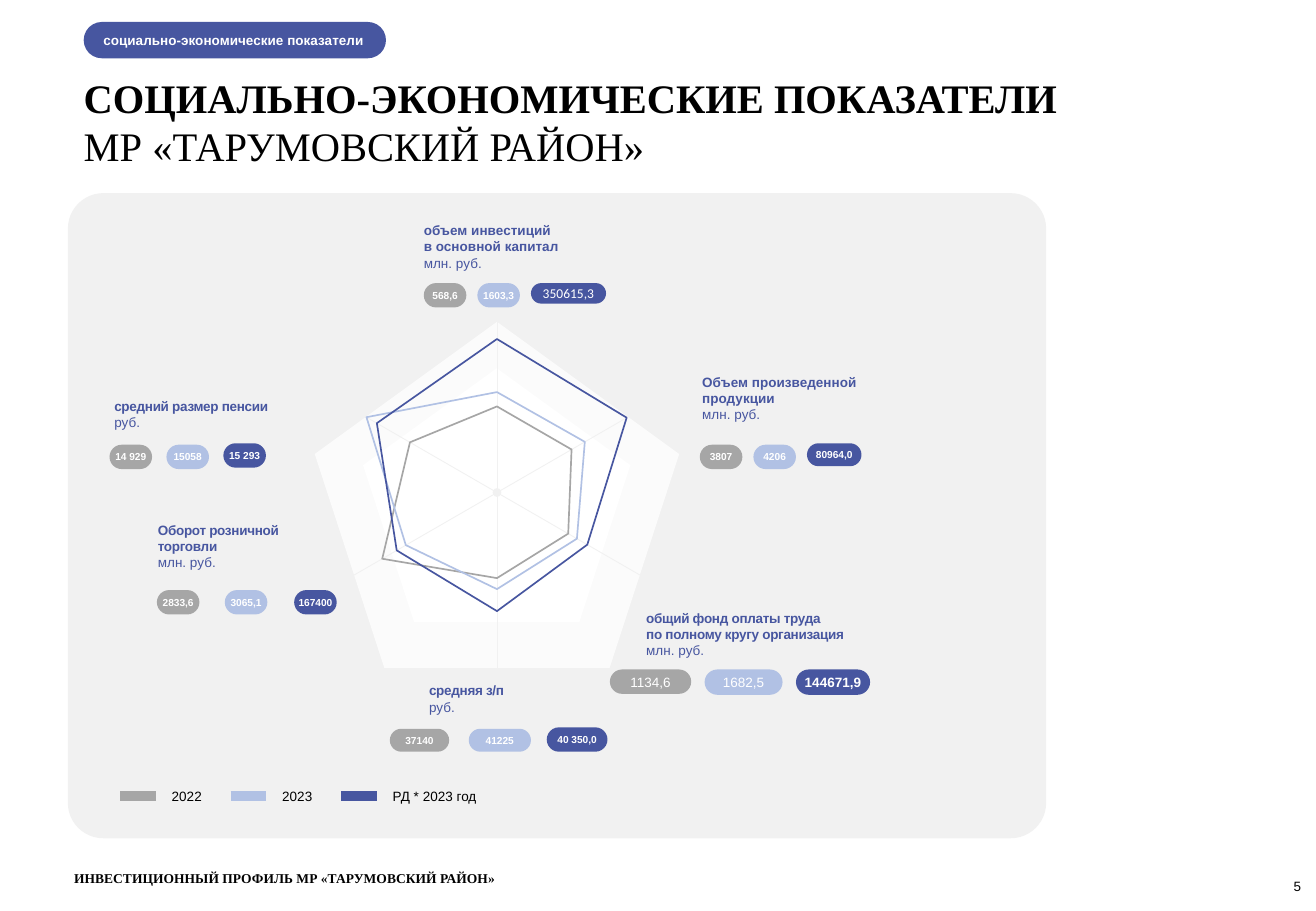
from itertools import cycle
from math import cos, radians, sin

from lxml import etree
from pptx import Presentation
from pptx.dml.color import RGBColor
from pptx.enum.shapes import MSO_CONNECTOR, MSO_SHAPE
from pptx.enum.text import MSO_ANCHOR, MSO_AUTO_SIZE, PP_ALIGN
from pptx.oxml.ns import qn
from pptx.util import Cm, Pt

ROUNDED, PENTAGON, OVAL = MSO_SHAPE.ROUNDED_RECTANGLE, MSO_SHAPE.REGULAR_PENTAGON, MSO_SHAPE.OVAL
STRAIGHT = MSO_CONNECTOR.STRAIGHT
LEFT, CENTER, RIGHT = PP_ALIGN.LEFT, PP_ALIGN.CENTER, PP_ALIGN.RIGHT
TOP, MIDDLE, BOTTOM = MSO_ANCHOR.TOP, MSO_ANCHOR.MIDDLE, MSO_ANCHOR.BOTTOM

COLORS = {"2022": "A6A6A6", "2023": "B1C1E4", "region": "4756A0", "panel": "F1F1F1",
          "outer": "FBFBFB", "white": "FFFFFF", "black": "000000"}
SERIES = ["2022", "2023", "region"]
LEGEND = ["2022", "2023", "РД * 2023 год"]
FRAME = {"margin_left": 0, "margin_top": 0, "margin_right": 0, "margin_bottom": 0,
         "word_wrap": True, "auto_size": MSO_AUTO_SIZE.NONE}
FONT = {"name": "Arial", "size": Pt(8), "bold": False}
SERIF = {"name": "Times New Roman"}
SMALL = {"size": Pt(6), "bold": True}
BOLD = {"bold": True}
PLAIN = {}
LINE_HEIGHT = 0.34
PILL = (0.89, 0.51)

RADII = {"2022": [1.8, 1.8, 1.72, 1.79, 2.77, 2.1],
         "2023": [2.1, 2.12, 1.93, 2.02, 2.2, 3.15],
         "region": [3.21, 3.13, 2.18, 2.48, 2.42, 2.9]}
SPOKES = [3.57, 3.23, 3.49, 3.67, 3.49, 3.23]

INDICATORS = [
    {"box": (8.86, 4.65, 3.12), "label": ["объем инвестиций", "в основной капитал"], "unit": "млн. руб.",
     "values": ["568,6", "1603,3", "350615,3"], "spots": [(0, 1.27), (1.12, 1.27), (2.24, 1.27)],
     "sizes": [PILL, PILL, (1.57, 0.43)], "fonts": [SMALL, SMALL, {"name": "Calibri"}], "spacing": 0},
    {"box": (14.68, 7.82, 3.38), "label": ["Объем произведенной", "продукции"], "unit": "млн. руб.",
     "values": ["3807", "4206", "80964,0"], "spots": [(-0.05, 1.48), (1.07, 1.48), (2.19, 1.45)],
     "sizes": [PILL, PILL, (1.14, 0.48)], "fonts": [SMALL], "spacing": 0},
    {"box": (13.51, 12.75, 4.34), "label": ["общий фонд оплаты труда", "по полному кругу организация"],
     "unit": "млн. руб.", "values": ["1134,6", "1682,5", "144671,9"],
     "spots": [(-0.76, 1.25), (1.22, 1.25), (3.13, 1.25)],
     "sizes": [(1.7, 0.51), (1.63, 0.53), (1.55, 0.53)], "fonts": [PLAIN, PLAIN, BOLD], "spacing": -20},
    {"box": (3.3, 10.92, 2.74), "label": ["Оборот розничной", "торговли"], "unit": "млн. руб.",
     "values": ["2833,6", "3065,1", "167400"], "spots": [(-0.02, 1.42), (1.4, 1.42), (2.85, 1.42)],
     "sizes": [PILL], "fonts": [SMALL], "spacing": -20},
    {"box": (2.39, 8.33, 4.34), "label": ["средний размер пенсии"], "unit": "руб.",
     "values": ["14 929", "15058", "15 293"], "spots": [(-0.1, 0.97), (1.09, 0.97), (2.28, 0.94)],
     "sizes": [PILL], "fonts": [SMALL], "spacing": -20},
    {"box": (8.97, 14.27, 2.74), "label": ["средняя з/п"], "unit": "руб.",
     "values": ["37140", "41225", "40 350,0"], "spots": [(-0.82, 0.97), (0.83, 0.97), (2.46, 0.94)],
     "sizes": [(1.24, 0.48), (1.3, 0.48), (1.27, 0.51)], "fonts": [SMALL], "spacing": -20},
]


def apply(target, values):
    """Set every attribute named in a dict of format values."""
    for name, value in values.items():
        setattr(target, name, value)


def lengths(box):
    """Turn a box in centimetres into lengths."""
    return [Cm(value) for value in box]


def write(shape, lines, color="black", align=LEFT, anchor=TOP, frame=PLAIN):
    """Write one paragraph for each pair of text and font values."""
    apply(shape.text_frame, {**FRAME, "vertical_anchor": anchor, **frame})
    for index, (text, font) in enumerate(lines):
        para = shape.text_frame.add_paragraph() if index else shape.text_frame.paragraphs[0]
        para.alignment = align
        span = para.add_run()
        span.text = text
        apply(span.font, {**FONT, **font})
        span.font.color.rgb = RGBColor.from_string(COLORS[color])


def add_text(page, box, lines, **options):
    """Add a text box."""
    shape = page.shapes.add_textbox(*lengths(box))
    write(shape, lines, **options)
    return shape


def add_block(page, kind, box, color, rounding=None):
    """Add a flat filled shape without an outline."""
    shape = page.shapes.add_shape(kind, *lengths(box))
    shape.shadow.inherit = False
    shape.fill.solid()
    shape.fill.fore_color.rgb = RGBColor.from_string(COLORS[color])
    shape.line.fill.background()
    if rounding is not None:
        shape.adjustments[0] = rounding
    return shape


def add_line(page, start, end, color, width):
    """Add a flat straight line."""
    line = page.shapes.add_connector(STRAIGHT, *lengths(start), *lengths(end))
    line.line.color.rgb = RGBColor.from_string(COLORS[color])
    line.line.width = Pt(width)
    etree.SubElement(line.element.spPr, qn("a:effectLst"))


def add_header(page, box):
    """Place the section badge and the title."""
    left, top, width, height = box
    badge = add_block(page, ROUNDED, (left, top, 6.32, 0.76), "region", 0.5)
    write(badge, [("социально-экономические показатели", BOLD)], color="white", anchor=MIDDLE,
          frame={"margin_left": Cm(0.4 if width < 10 else 0.3)})
    title = page.shapes.title
    title_box = lengths((left, top + 1.06, width, height - 1.06))
    apply(title, dict(zip(("left", "top", "width", "height"), title_box)))
    write(title, [("СОЦИАЛЬНО-ЭКОНОМИЧЕСКИЕ ПОКАЗАТЕЛИ", {**SERIF, **BOLD, "size": Pt(24)}),
                  ("МР «ТАРУМОВСКИЙ РАЙОН»", {**SERIF, "size": Pt(24)})])


def add_legend(page, box):
    """Place a colour stroke and a name for each series."""
    left, top, step, height = box
    middle = top + height / 2
    for index, (series, name) in enumerate(zip(SERIES, LEGEND)):
        start = left + index * step
        add_line(page, (start, middle), (start + 0.75, middle), series, 6)
        add_text(page, (start + 1.08, top, 2.2, height), [(name, PLAIN)])


def add_radar(page, box):
    """Place the pentagons, the spokes and the outline of each series."""
    left, top, width, height = box
    center_x, center_y = left + width / 2, top + SPOKES[0]

    def corners(radii):
        """Find the points at the given radii, one every 60 degrees."""
        return [(center_x + radius * sin(radians(60 * index)), center_y - radius * cos(radians(60 * index)))
                for index, radius in enumerate(radii)]

    add_block(page, PENTAGON, box, "outer")
    add_block(page, PENTAGON, (left + 1.01, top + 0.97, 5.59, 5.31), "white")
    ends = corners(SPOKES)
    for start, end in zip(ends[:3], ends[3:]):
        add_line(page, start, end, "panel", 0.5)
    add_block(page, OVAL, (center_x - 0.09, center_y - 0.09, 0.18, 0.18), "panel")
    for series in SERIES:
        points = [lengths(point) for point in corners(RADII[series])]
        builder = page.shapes.build_freeform(*points[0])
        builder.add_line_segments(points[1:], close=True)
        outline = builder.convert_to_shape()
        outline.shadow.inherit = False
        outline.fill.background()
        outline.line.color.rgb = RGBColor.from_string(COLORS[series])
        outline.line.width = Pt(1)


def add_indicator(page, box, label, unit, values, spots, sizes, fonts, spacing):
    """Place the label of an indicator and its three value pills."""
    left, top, width = box
    lines = [(text, BOLD) for text in label] + [(unit, PLAIN)]
    caption = add_text(page, (left, top, width, LINE_HEIGHT * len(lines)), lines, color="region")
    if spacing:
        for properties in list(caption.element.iter(qn("a:rPr")))[:-1]:
            properties.set("spc", str(spacing))
    for series, value, (across, down), size, font in zip(SERIES, values, spots, cycle(sizes), cycle(fonts)):
        pill = add_block(page, ROUNDED, (left + across, top + down, *size), series, 0.5)
        write(pill, [(value, font)], color="white", align=CENTER, anchor=MIDDLE)


def add_footer(page, box):
    """Place the document name and the page number."""
    left, top, width, height = box
    add_text(page, (left, top, 20.32, height), [("ИНВЕСТИЦИОННЫЙ ПРОФИЛЬ МР «ТАРУМОВСКИЙ РАЙОН»", {**SERIF, **BOLD})])
    add_text(page, (left + width - 2.03, top + 0.17, 2.03, height), [("5", PLAIN)], align=RIGHT, anchor=BOTTOM)


def main():
    """Build the slide and save the deck."""
    deck = Presentation()
    apply(deck, {"slide_width": Cm(27.51), "slide_height": Cm(19.05)})
    page = deck.slides.add_slide(deck.slide_layouts[5])
    add_header(page, (1.75, 0.46, 24.51, 3.12))
    add_block(page, ROUNDED, (1.42, 4.04, 20.45, 13.49), "panel", 0.055)
    add_legend(page, (2.51, 16.48, 2.31, 0.34))
    add_radar(page, (6.58, 6.73, 7.62, 7.24))
    for indicator in INDICATORS:
        add_indicator(page, **indicator)
    add_footer(page, (1.55, 18.19, 25.65, 0.33))
    deck.save("out.pptx")


if __name__ == "__main__":
    main()
